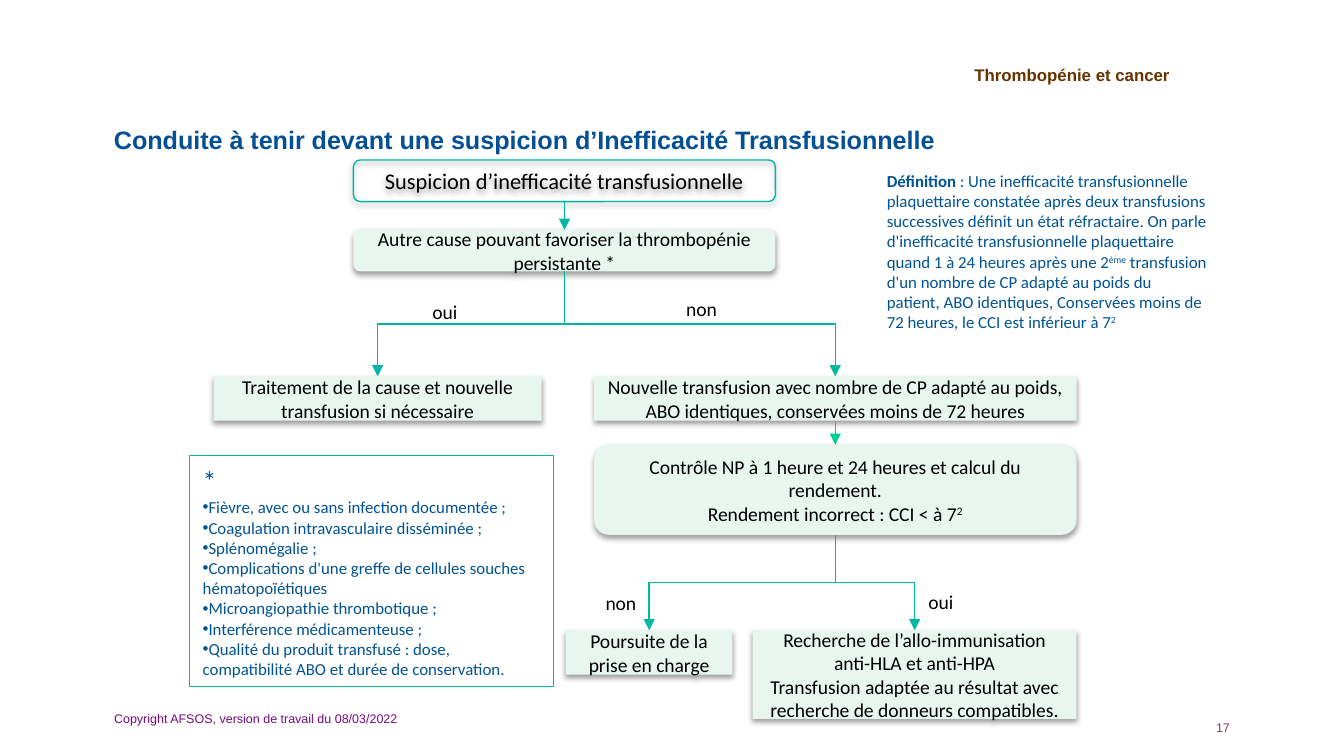
from dataclasses import dataclass
from typing import NamedTuple

from lxml import etree
from pptx import Presentation
from pptx.dml.color import RGBColor
from pptx.enum.shapes import MSO_CONNECTOR, MSO_SHAPE
from pptx.enum.text import MSO_ANCHOR, PP_ALIGN
from pptx.oxml import parse_xml
from pptx.oxml.ns import nsdecls, qn
from pptx.util import Inches, Pt

RECT, ROUND = MSO_SHAPE.RECTANGLE, MSO_SHAPE.ROUNDED_RECTANGLE
STRAIGHT, ELBOW = MSO_CONNECTOR.STRAIGHT, MSO_CONNECTOR.ELBOW
LEFT, CENTER, RIGHT = PP_ALIGN.LEFT, PP_ALIGN.CENTER, PP_ALIGN.RIGHT
TOP, MIDDLE = MSO_ANCHOR.TOP, MSO_ANCHOR.MIDDLE

BLACK = RGBColor(0x00, 0x00, 0x00)
BROWN = RGBColor(0x66, 0x33, 0x00)
TITLE_BLUE = RGBColor(0x05, 0x50, 0x95)
TEXT_BLUE = RGBColor(0x00, 0x53, 0x94)
PLUM = RGBColor(0x86, 0x39, 0x66)
PURPLE = RGBColor(0x77, 0x09, 0x80)
TEAL = RGBColor(0x00, 0xB7, 0xA0)
GREEN = RGBColor(0x00, 0xCC, 0x99)
MINT = RGBColor(0xE7, 0xF6, 0xEF)
LINE_WIDTH = Pt(0.75)
BOTTOM_SITE, TOP_SITE = 2, 0


class Span(NamedTuple):
    text: str
    bold: bool = False
    raised: bool = False


class Area(NamedTuple):
    left: float
    top: float
    width: float
    height: float


@dataclass
class Style:
    size: float = 10.5
    color: RGBColor = BLACK
    name: str = "Calibri"
    align: PP_ALIGN = CENTER
    anchor: MSO_ANCHOR = MIDDLE
    bold: bool = False


@dataclass
class Step:
    area: Area
    paragraphs: list
    kind: MSO_SHAPE = RECT
    outlined: bool = False
    size: float = 10.5


@dataclass
class Label:
    area: Area
    spans: list
    style: Style


def write_paragraph(para, spans: list, style: Style) -> None:
    para.alignment = style.align
    for item in spans:
        span = para.add_run()
        span.text = item.text
        values = {"name": style.name, "size": Pt(style.size), "bold": style.bold or item.bold}
        for key, value in values.items():
            setattr(span.font, key, value)
        span.font.color.rgb = style.color
        if item.raised:
            span._r.get_or_add_rPr().set("baseline", "30000")


def write_text(shape, paragraphs: list, style: Style) -> None:
    frame = shape.text_frame
    frame.word_wrap = True
    frame.vertical_anchor = style.anchor
    for index, spans in enumerate(paragraphs):
        para = frame.add_paragraph() if index else frame.paragraphs[0]
        write_paragraph(para, spans, style)


def add_panel(page, kind: MSO_SHAPE, area: Area, outlined: bool):
    panel = page.shapes.add_shape(kind, *map(Inches, area))
    panel.shadow.inherit = False
    if outlined:
        panel.fill.background()
        panel.line.color.rgb = TEAL
        panel.line.width = LINE_WIDTH
    else:
        panel.fill.solid()
        panel.fill.fore_color.rgb = MINT
        panel.line.fill.background()
    return panel


def add_step(page, step: Step):
    box = add_panel(page, step.kind, step.area, step.outlined)
    effects = box._element.spPr.find(qn("a:effectLst"))
    effects.append(parse_xml(
        f'<a:outerShdw {nsdecls("a")} blurRad="{Pt(3.1)}" dist="{Pt(1.6)}" dir="5400000" '
        'rotWithShape="0"><a:srgbClr val="000000"><a:alpha val="38000"/></a:srgbClr></a:outerShdw>'))
    write_text(box, step.paragraphs, Style(size=step.size))
    return box


def add_label(page, label: Label) -> None:
    box = page.shapes.add_textbox(*map(Inches, label.area))
    write_text(box, [label.spans], label.style)


def finish_arrow(arrow, color: RGBColor) -> None:
    arrow.line.color.rgb = color
    arrow.line.width = LINE_WIDTH
    etree.SubElement(arrow.line._get_or_add_ln(), qn("a:tailEnd"), type="triangle")
    etree.SubElement(arrow._element.spPr, qn("a:effectLst"))


def add_arrow(page, upper, lower, color: RGBColor) -> None:
    arrow = page.shapes.add_connector(STRAIGHT, 0, 0, 0, 0)
    arrow.begin_connect(upper, BOTTOM_SITE)
    arrow.end_connect(lower, TOP_SITE)
    finish_arrow(arrow, color)


def add_branch(page, upper, lower) -> None:
    """Elbow leaving downwards: a horizontal elbow turned by a quarter."""
    start_x, start_y = upper.left + upper.width // 2, upper.top + upper.height
    end_x, end_y = lower.left + lower.width // 2, lower.top
    half_run, half_drop = abs(end_x - start_x) // 2, (end_y - start_y) // 2
    middle_x, middle_y = (start_x + end_x) // 2, (start_y + end_y) // 2
    branch = page.shapes.add_connector(ELBOW, middle_x - half_drop, middle_y - half_run,
                                       middle_x + half_drop, middle_y + half_run)
    frame = branch._element.spPr.find(qn("a:xfrm"))
    if end_x < start_x:
        frame.set("rot", "5400000")
    else:
        frame.set("rot", "16200000")
        frame.set("flipH", "1")
    finish_arrow(branch, TEAL)


def add_cause_list(page, area: Area, causes: list) -> None:
    box = add_panel(page, RECT, area, True)
    write_text(box, [[Span("*")]], Style(15, TEXT_BLUE, align=LEFT))
    for cause in causes:
        para = box.text_frame.add_paragraph()
        properties = para._p.get_or_add_pPr()
        properties.set("marL", "0")
        properties.set("indent", "0")
        etree.SubElement(properties, qn("a:buFont"), typeface="Arial")
        etree.SubElement(properties, qn("a:buChar"), char="•")
        write_paragraph(para, [Span(cause)], Style(9, TEXT_BLUE, align=LEFT))


CAUSES = [
    "Fièvre, avec ou sans infection documentée ;",
    "Coagulation intravasculaire disséminée ;",
    "Splénomégalie ;",
    "Complications d'une greffe de cellules souches hématopoïétiques",
    "Microangiopathie thrombotique ;",
    "Interférence médicamenteuse ;",
    "Qualité du produit transfusé : dose, compatibilité ABO et durée de conservation.",
]
STEPS = {
    "suspicion": Step(Area(2.63, 1.19, 3.14, 0.31),
                      [[Span("Suspicion d’inefficacité transfusionnelle")]], ROUND, True, 12),
    "other cause": Step(Area(2.63, 1.71, 3.14, 0.31), [[Span(
        "Autre cause pouvant favoriser la thrombopénie persistante *")]], ROUND),
    "treatment": Step(Area(1.59, 2.8, 2.44, 0.33), [[Span(
        "Traitement de la cause et nouvelle transfusion si nécessaire")]]),
    "transfusion": Step(Area(4.42, 2.8, 3.59, 0.33), [[Span(
        "Nouvelle transfusion avec nombre de CP adapté au poids, ABO identiques, "
        "conservées moins de 72 heures")]]),
    "control": Step(Area(4.42, 3.31, 3.59, 0.67), [
        [Span("Contrôle NP à 1 heure et 24 heures et calcul du rendement.")],
        [Span("Rendement incorrect : CCI < à 7"), Span("2", raised=True)]], ROUND),
    "continue": Step(Area(4.21, 4.69, 1.24, 0.33), [[Span("Poursuite de la prise en charge")]]),
    "search": Step(Area(5.6, 4.69, 2.41, 0.66), [
        [Span("Recherche de l’allo-immunisation anti-HLA et anti-HPA")],
        [Span("Transfusion adaptée au résultat avec recherche de donneurs compatibles.")]]),
}
ARROWS = [("suspicion", "other cause", TEAL), ("transfusion", "control", GREEN)]
BRANCHES = [("other cause", "treatment"), ("other cause", "transfusion"),
            ("control", "search"), ("control", "continue")]
ANSWERS = [("oui", 2.82, 2.18), ("non", 4.73, 2.16), ("oui", 6.51, 4.34), ("non", 4.13, 4.35)]
DEFINITION = [
    Span("Définition", bold=True),
    Span(" : Une inefficacité transfusionnelle plaquettaire constatée après deux transfusions "
         "successives définit un état réfractaire. On parle d'inefficacité transfusionnelle "
         "plaquettaire quand 1 à 24 heures après une 2"),
    Span("ème", raised=True),
    Span(" transfusion d'un nombre de CP adapté au poids du patient, ABO identiques, "
         "Conservées moins de 72 heures, le CCI est inférieur à 7"),
    Span("2", raised=True),
]
LABELS = [
    Label(Area(5.87, 0.33, 2.93, 0.45), [Span("Thrombopénie et cancer")],
          Style(9, BROWN, "Arial", RIGHT, bold=True)),
    Label(Area(0.75, 0.69, 8.5, 0.69),
          [Span("Conduite à tenir devant une suspicion d’Inefficacité Transfusionnelle")],
          Style(13.5, TITLE_BLUE, "Arial", LEFT, bold=True)),
    Label(Area(7.17, 5.31, 2.08, 0.19), [Span("17")], Style(6.75, PLUM, "Arial", RIGHT, TOP)),
    Label(Area(6.5, 1.22, 2.58, 1.46), DEFINITION, Style(9, TEXT_BLUE, align=LEFT, anchor=TOP)),
    Label(Area(0.75, 5.2, 3.38, 0.3), [Span("Copyright AFSOS, version de travail du 08/03/2022")],
          Style(6.75, PURPLE, "Arial", LEFT)),
]


def main() -> None:
    deck = Presentation()
    deck.slide_width = Inches(10)
    deck.slide_height = deck.slide_width * 9 // 16
    page = deck.slides.add_slide(deck.slide_layouts[6])

    # Headings, definition and footer
    for label in LABELS:
        add_label(page, label)

    # Decision tree
    add_cause_list(page, Area(1.41, 3.39, 2.71, 1.72), CAUSES)
    boxes = {key: add_step(page, step) for key, step in STEPS.items()}
    for upper, lower, color in ARROWS:
        add_arrow(page, boxes[upper], boxes[lower], color)
    for upper, lower in BRANCHES:
        add_branch(page, boxes[upper], boxes[lower])
    for answer, left, top in ANSWERS:
        add_label(page, Label(Area(left, top, 0.98, 0.28), [Span(answer)], Style(anchor=TOP)))

    deck.save("out.pptx")


if __name__ == "__main__":
    main()
